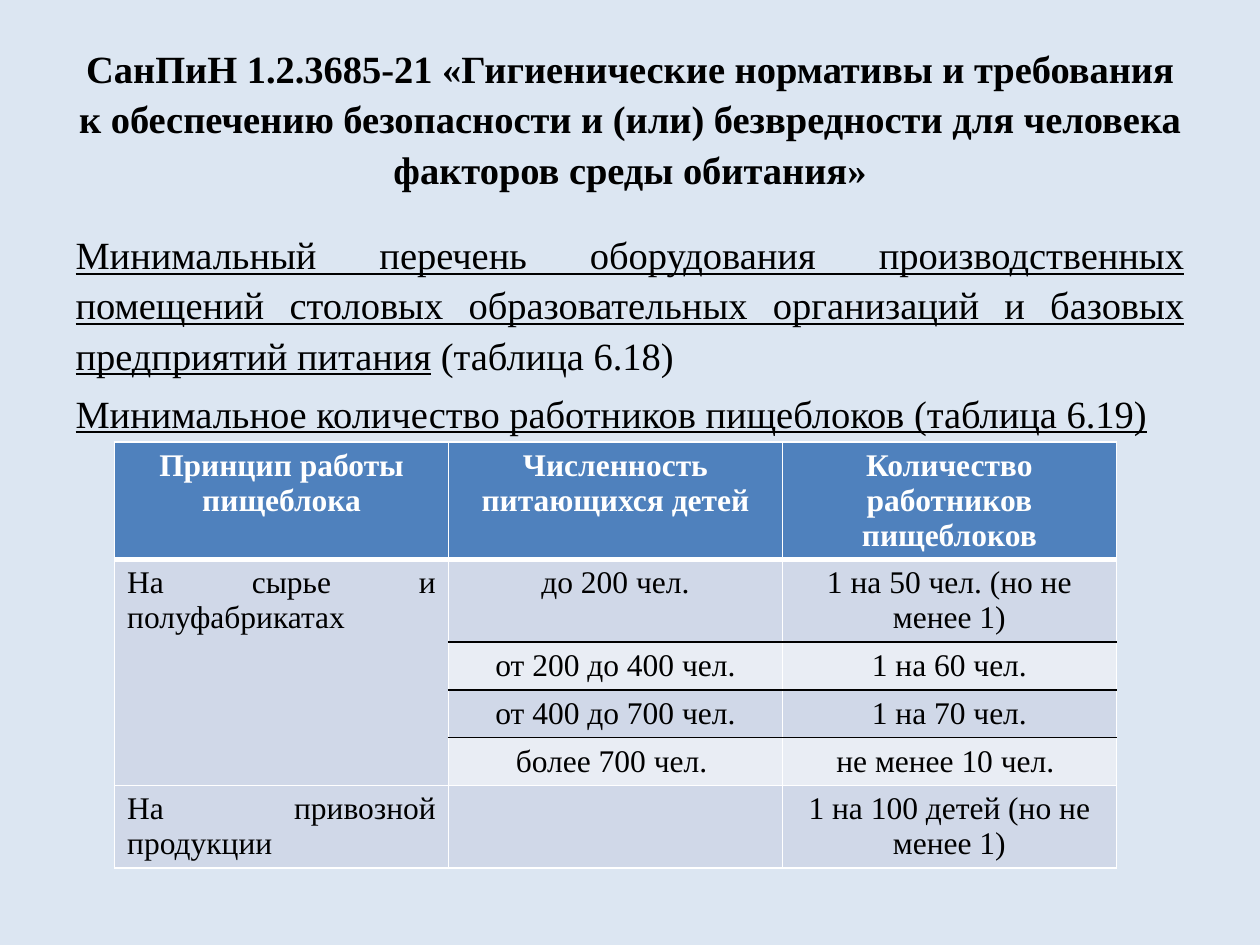
"""Build a slide on canteen staffing norms with a title, two statements and a table."""
from dataclasses import dataclass

from lxml.etree import SubElement
from pptx import Presentation
from pptx.dml.color import RGBColor
from pptx.enum.text import MSO_ANCHOR, MSO_AUTO_SIZE, PP_ALIGN
from pptx.oxml.ns import qn
from pptx.util import Inches, Pt


@dataclass(frozen=True)
class Theme:
    font: str = "Times New Roman"
    background: str = "DCE6F2"
    ink: str = "000000"
    white: str = "FFFFFF"
    header: str = "4F81BD"
    dark_band: str = "D0D8E8"
    light_band: str = "E9EDF4"
    text_size: int = 22
    table_size: int = 18
    line_spacing: float = 1.09


class SlideBuilder:
    def __init__(self, deck, theme):
        self.theme = theme
        self.page = deck.slides.add_slide(deck.slide_layouts[1])
        fill = self.page.background.fill
        fill.solid()
        fill.fore_color.rgb = RGBColor.from_string(theme.background)

    def add_span(self, para, text, size, color, bold=False, underline=False):
        span = para.add_run()
        span.text = text
        font = span.font
        font.name = self.theme.font
        font.size = Pt(size)
        font.bold = bold
        font.underline = underline
        font.color.rgb = RGBColor.from_string(color)

    def fill_placeholder(self, box, place, paragraphs, align, bold=False):
        box.left, box.top, box.width, box.height = map(Inches, place)
        frame = box.text_frame
        frame.word_wrap = True
        frame.auto_size = MSO_AUTO_SIZE.NONE
        for index, spans in enumerate(paragraphs):
            para = frame.add_paragraph() if index else frame.paragraphs[0]
            para.alignment = align
            para.line_spacing = self.theme.line_spacing
            for text, underline in spans:
                self.add_span(para, text, self.theme.text_size, self.theme.ink, bold, underline)
        return frame

    def title(self, text, place):
        frame = self.fill_placeholder(
            self.page.shapes.title, place, [[(text, False)]], PP_ALIGN.CENTER, bold=True)
        frame.vertical_anchor = MSO_ANCHOR.MIDDLE

    def body(self, paragraphs, place):
        frame = self.fill_placeholder(
            self.page.placeholders[1], place, paragraphs, PP_ALIGN.JUSTIFY)
        for para in frame.paragraphs:
            properties = para._p.get_or_add_pPr()
            properties.set("marL", "0")
            properties.set("indent", "0")
            SubElement(properties, qn("a:buNone"))

    def border(self, cell, side, color, width=1):
        line = SubElement(cell._tc.get_or_add_tcPr(), qn(f"a:ln{side}"), w=str(Pt(width)))
        SubElement(SubElement(line, qn("a:solidFill")), qn("a:srgbClr"), val=color)

    def cell(self, cell, text, fill, color, align, bold, top, bottom, bottom_width):
        self.border(cell, "L", self.theme.white)
        self.border(cell, "R", self.theme.white)
        self.border(cell, "T", top)
        self.border(cell, "B", bottom, bottom_width)
        cell.fill.solid()
        cell.fill.fore_color.rgb = RGBColor.from_string(fill)
        para = cell.text_frame.paragraphs[0]
        para.alignment = align
        para.font.size = Pt(self.theme.table_size)
        if text:
            self.add_span(para, text, self.theme.table_size, color, bold)

    def table(self, rows, left, top, column_width, heights, group):
        theme = self.theme
        first, last = group
        columns = len(rows[0])
        table = self.page.shapes.add_table(
            len(rows), columns, Inches(left), Inches(top),
            Inches(column_width * columns), Inches(sum(heights))).table
        for column in table.columns:
            column.width = Inches(column_width)
        for r, (texts, height) in enumerate(zip(rows, heights)):
            table.rows[r].height = Inches(height)
            is_header = r == 0
            band = theme.dark_band if r % 2 else theme.light_band
            for c, text in enumerate(texts):
                fill = theme.dark_band if c == 0 else band
                justified = c == 0 and not is_header
                self.cell(
                    table.cell(r, c), text,
                    fill=theme.header if is_header else fill,
                    color=theme.white if is_header else theme.ink,
                    align=PP_ALIGN.JUSTIFY if justified else PP_ALIGN.CENTER,
                    bold=is_header,
                    top=theme.ink if c and first < r <= last else theme.white,
                    bottom=theme.ink if c and first <= r < last else theme.white,
                    bottom_width=3 if is_header else 1)
        table.cell(first, 0).merge(table.cell(last, 0))


def main():
    deck = Presentation()
    deck.slide_width, deck.slide_height = Inches(10), Inches(7.5)
    slide = SlideBuilder(deck, Theme())
    slide.title(
        "СанПиН 1.2.3685-21 «Гигиенические нормативы и требования к обеспечению "
        "безопасности и (или) безвредности для человека факторов среды обитания»",
        (0.5, 0.3, 9, 1.25))
    slide.body([
        [("Минимальный перечень оборудования производственных помещений столовых "
          "образовательных организаций и базовых предприятий питания", True),
         (" (таблица 6.18)", False)],
        [("Минимальное количество работников пищеблоков (таблица 6.19)", True)],
    ], (0.5, 1.75, 9, 4.95))
    slide.table([
        ("Принцип работы пищеблока", "Численность питающихся детей",
         "Количество работников пищеблоков"),
        ("На сырье и полуфабрикатах", "до 200 чел.", "1 на 50 чел. (но не менее 1)"),
        ("", "от 200 до 400 чел.", "1 на 60 чел."),
        ("", "от 400 до 700 чел.", "1 на 70 чел."),
        ("", "более 700 чел. ", "не менее 10 чел. "),
        ("На привозной продукции", "", "1 на 100 детей (но не менее 1)"),
    ], left=0.91, top=3.51, column_width=2.65,
        heights=(0.93, 0.65, 0.38, 0.38, 0.38, 0.65), group=(1, 4))
    deck.save("out.pptx")


if __name__ == "__main__":
    main()
